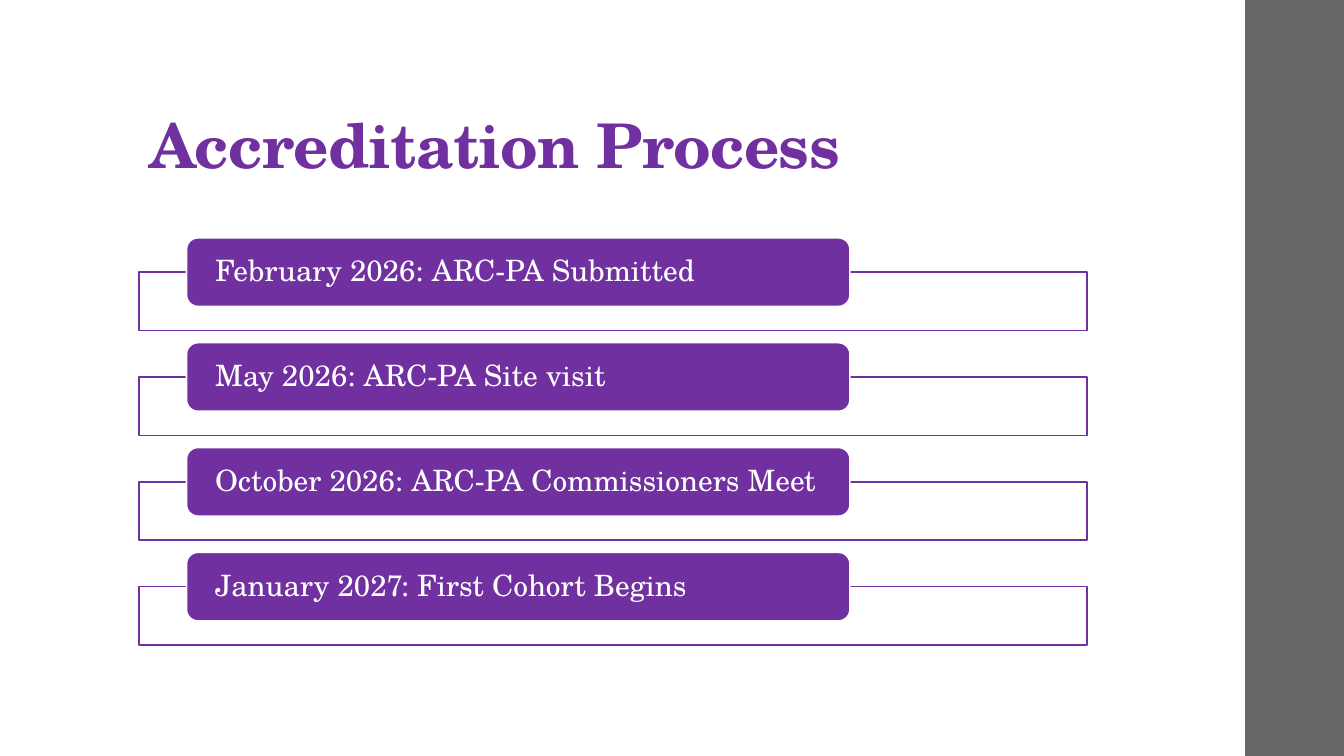
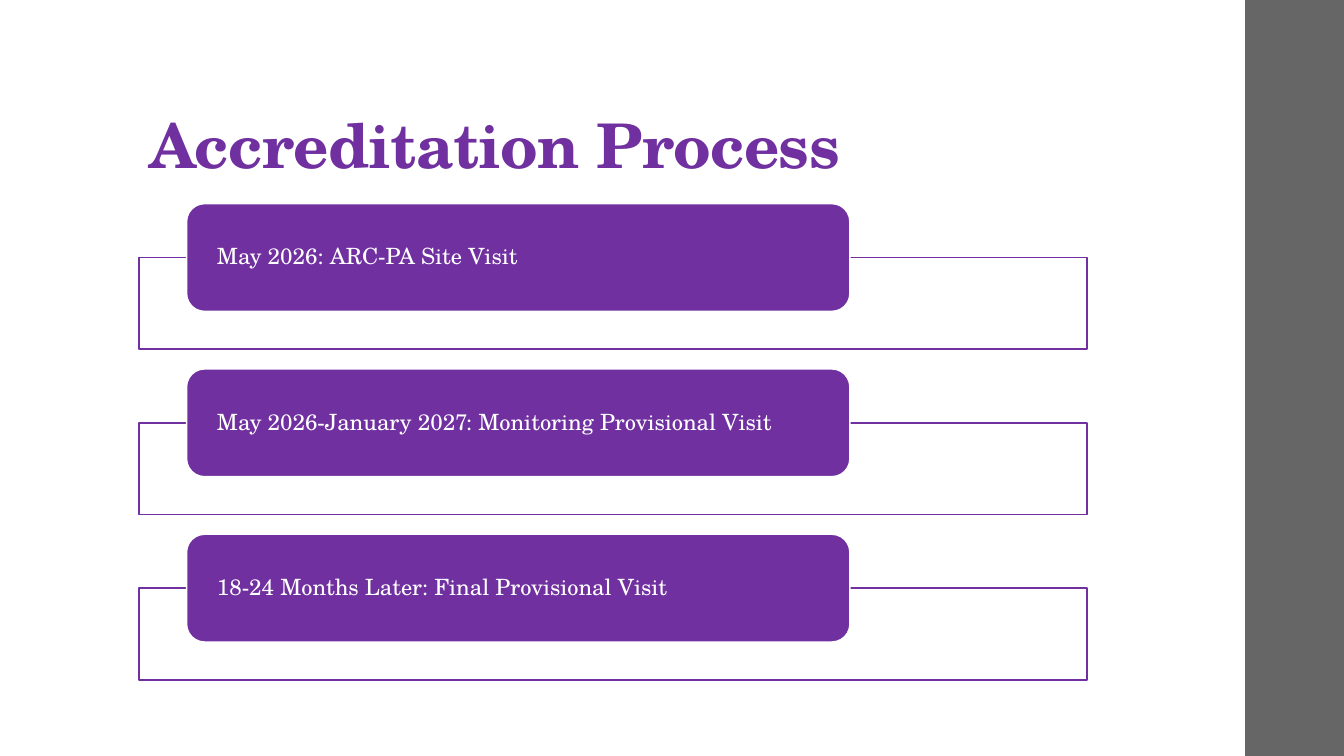
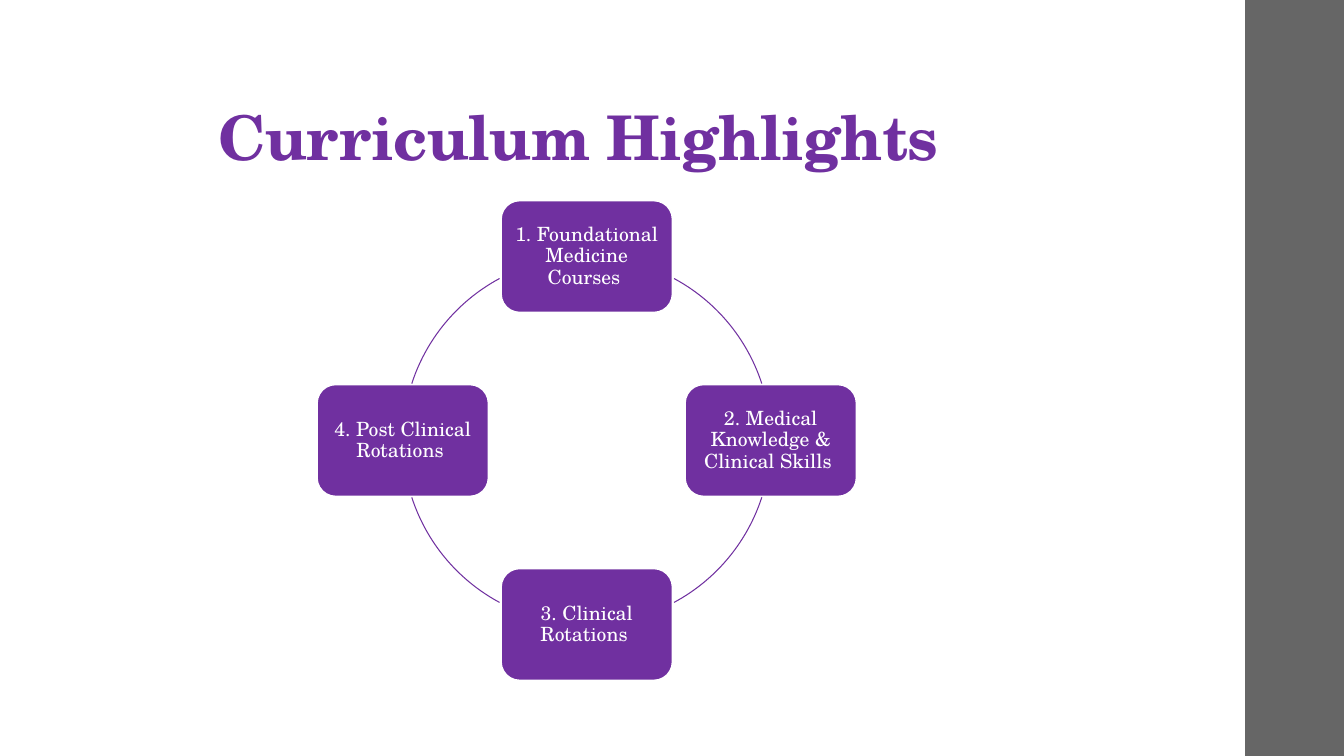
from math import cos, radians, sin
from pptx import Presentation
from pptx.dml.color import RGBColor
from pptx.enum.shapes import MSO_SHAPE
from pptx.enum.text import MSO_ANCHOR, MSO_AUTO_SIZE, PP_ALIGN
from pptx.util import Inches, Pt

COLORS = {"purple": "7030A0", "white": "FFFFFF", "band": "666666"}
FONT = "TeX Gyre Schola"

prs = Presentation()
prs.slide_width, prs.slide_height = Inches(13.33), Inches(7.5)
layout = prs.slide_layouts[5]


def add_titled_slide(title, left, top, align):
    slide = prs.slides.add_slide(layout)
    heading = slide.shapes.title
    heading.left, heading.top = Inches(left), Inches(top)
    heading.width, heading.height = Inches(10.6), Inches(1.56)
    frame = heading.text_frame
    frame.text = title
    frame.auto_size = MSO_AUTO_SIZE.NONE
    frame.vertical_anchor = MSO_ANCHOR.BOTTOM
    frame.margin_top = Inches(0.03)
    paragraph = frame.paragraphs[0]
    paragraph.alignment = align
    paragraph.line_spacing = 0.9
    run = paragraph.runs[0]
    run.font.name, run.font.size, run.font.bold = FONT, Pt(44), True
    run.font.color.rgb = RGBColor.from_string(COLORS["purple"])
    run.font._element.set("spc", "-50")
    return slide


def add_box(slide, preset, box, fill, line, weight=1.1, text="", size=14,
            align=PP_ALIGN.LEFT, margins=(0.25, 0)):
    shape = slide.shapes.add_shape(preset, *[Inches(v) for v in box])
    shape.shadow.inherit = False
    if fill:
        shape.fill.solid()
        shape.fill.fore_color.rgb = RGBColor.from_string(COLORS[fill])
    else:
        shape.fill.background()
    if line:
        shape.line.color.rgb = RGBColor.from_string(COLORS[line])
        shape.line.width = Pt(weight)
    else:
        shape.line.fill.background()
    if text:
        frame = shape.text_frame
        frame.text = text
        frame.word_wrap = True
        frame.vertical_anchor = MSO_ANCHOR.MIDDLE
        frame.margin_left = frame.margin_right = Inches(margins[0])
        frame.margin_top = frame.margin_bottom = Inches(margins[1])
        paragraph = frame.paragraphs[0]
        paragraph.alignment = align
        paragraph.line_spacing = 0.9
        font = paragraph.runs[0].font
        font.name, font.size = FONT, Pt(size)
        font.color.rgb = RGBColor.from_string(COLORS["white"])
    return shape


# Accreditation timelines: labels, top, pitch, label height, frame height, text size
timelines = [
    (["February 2026: ARC-PA Submitted",
      "May 2026: ARC-PA Site visit",
      "October 2026: ARC-PA Commissioners Meet",
      "January 2027: First Cohort Begins"], 2.36, 1.04, 0.68, 0.58, 21),
    (["May 2026: ARC-PA Site Visit",
      "May 2026-January 2027: Monitoring Provisional Visit",
      "18-24 Months Later: Final Provisional Visit"], 2.02, 1.64, 1.07, 0.91, 16),
]
for milestones, first_top, pitch, label_height, frame_height, size in timelines:
    slide = add_titled_slide("Accreditation Process", 1.38, 0.29, PP_ALIGN.LEFT)
    for i, milestone in enumerate(milestones):
        top = first_top + i * pitch
        add_box(slide, MSO_SHAPE.RECTANGLE,
                (1.38, top + label_height / 2, 9.4, frame_height), "white", "purple")
        add_box(slide, MSO_SHAPE.ROUNDED_RECTANGLE, (1.85, top, 6.58, label_height),
                "purple", "white", text=milestone, size=size)

# Curriculum cycle: clockwise from the top, joined by arcs
slide = add_titled_slide("Curriculum Highlights ", 0.52, 0.21, PP_ALIGN.CENTER)
stages = ["1. Foundational Medicine Courses ",
          "2. Medical Knowledge & Clinical Skills ",
          "3. Clinical Rotations ",
          "4. Post Clinical Rotations "]
center_x, center_y, radius = 5.82, 4.37, 1.825
box_width, box_height = 1.7, 1.11
# Arc ends in degrees, clockwise from the right
arc_spans = [(298.3, 342), (18, 61.7), (118.3, 162), (198, 241.7)]
for i, (stage, span) in enumerate(zip(stages, arc_spans)):
    angle = radians(90 * i - 90)
    left = center_x + radius * cos(angle) - box_width / 2
    top = center_y + radius * sin(angle) - box_height / 2
    add_box(slide, MSO_SHAPE.ROUNDED_RECTANGLE, (left, top, box_width, box_height),
            "purple", "white", text=stage, align=PP_ALIGN.CENTER, margins=(0.06, 0.06))
    arc = add_box(slide, MSO_SHAPE.ARC,
                  (center_x - radius, center_y - radius, 2 * radius, 2 * radius),
                  None, "purple", 0.75)
    for end, degrees in enumerate(span):
        arc.adjustments[end] = degrees * 0.6  # 60000 units per degree, scaled by 100000

# Side band, moved to the layout so that every slide shows it
band = add_box(slide, MSO_SHAPE.RECTANGLE, (12.35, 0, 0.98, 7.5), "band", None)
layout.shapes._spTree.insert(2, band._element)

prs.save("out.pptx")
